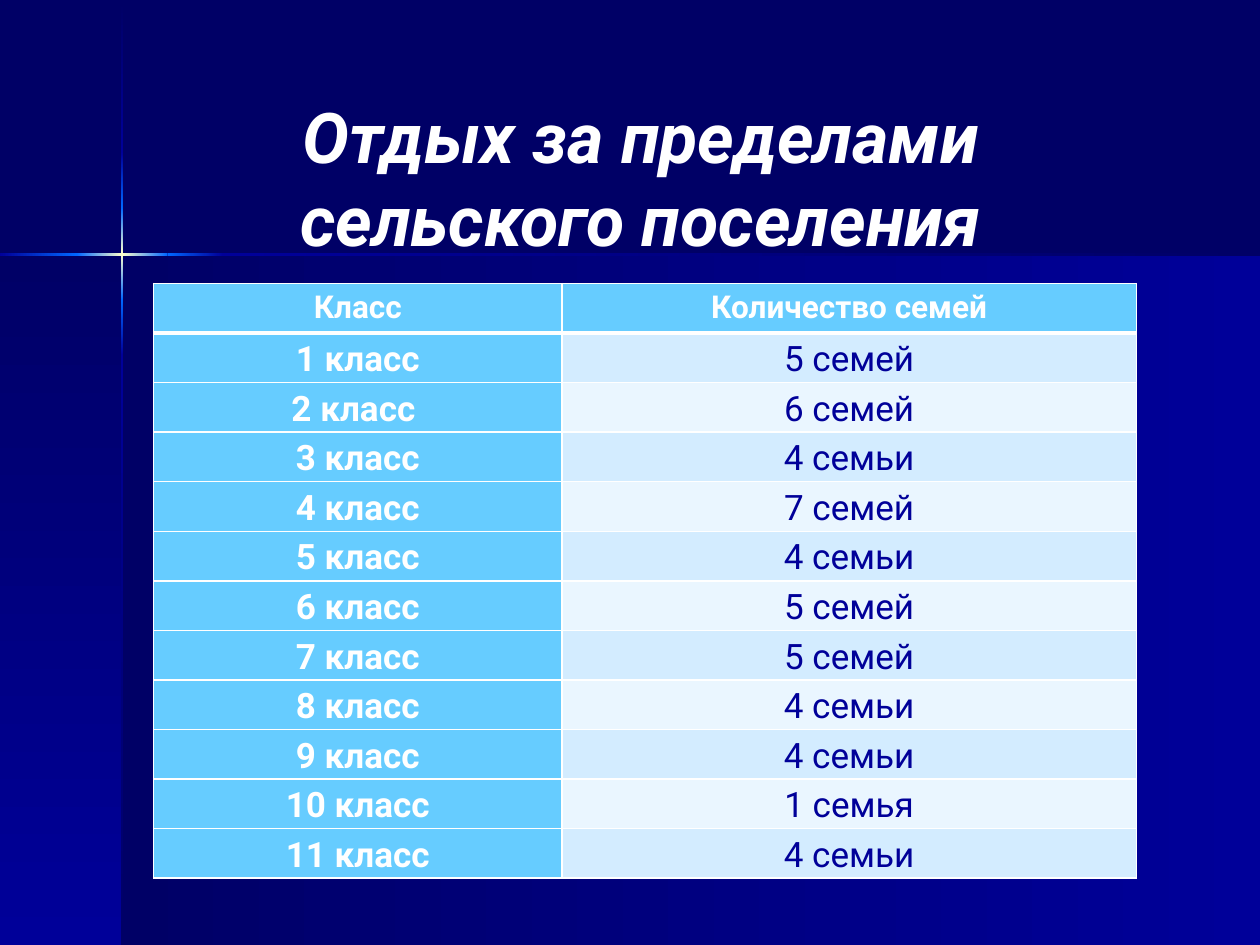
from itertools import pairwise

from lxml import etree
from pptx import Presentation
from pptx.dml.color import RGBColor
from pptx.enum.shapes import MSO_SHAPE
from pptx.enum.text import MSO_ANCHOR, MSO_AUTO_SIZE, PP_ALIGN
from pptx.oxml.ns import qn
from pptx.util import Inches, Pt

RECT = MSO_SHAPE.RECTANGLE
MIDDLE = MSO_ANCHOR.MIDDLE
CENTER = PP_ALIGN.CENTER
GROW = MSO_AUTO_SIZE.SHAPE_TO_FIT_TEXT

COLORS = {
    "night": "000066",
    "navy": "000099",
    "blue": "0066FF",
    "spark": "FFFFCC",
    "white": "FFFFFF",
    "sky": "66CCFF",
    "band_dark": "D3ECFF",
    "band_light": "EAF6FF",
}
FONT = "Roboto"
TITLE = ["Отдых за пределами", "сельского поселения"]
HEADER = ("Класс", "Количество семей")
ROWS = [
    ("1 класс", "5 семей"),
    ("2 класс ", "6 семей"),
    ("3 класс", "4 семьи"),
    ("4 класс", "7 семей"),
    ("5 класс", "4 семьи"),
    ("6 класс", "5 семей"),
    ("7 класс", "5 семей"),
    ("8 класс", "4 семьи"),
    ("9 класс", "4 семьи"),
    ("10 класс", "1 семья"),
    ("11 класс", "4 семьи"),
]


def rgb(name):
    return RGBColor.from_string(COLORS[name])


def format_text(p, text, size, color, bold, italic=False):
    p.alignment = CENTER
    r = p.add_run()
    r.text = text
    values = {"name": FONT, "size": Pt(size), "bold": bold, "italic": italic}
    for attr, value in values.items():
        setattr(r.font, attr, value)
    r.font.color.rgb = rgb(color)


def add_gradient(s, box, names, down=False):
    """Rectangle with evenly spaced gradient stops, running right or down."""
    sp = s.shapes.add_shape(RECT, *map(Inches, box))
    sp.shadow.inherit = False
    sp.line.fill.background()
    sp.fill.gradient()
    sp.fill.gradient_angle = 270 if down else 0
    stops = sp._element.spPr.find(qn("a:gradFill")).find(qn("a:gsLst"))
    for old in list(stops):
        stops.remove(old)
    for i, name in enumerate(names):
        pos = str(100000 * i // (len(names) - 1))
        gs = etree.SubElement(stops, qn("a:gs"), pos=pos)
        etree.SubElement(gs, qn("a:srgbClr"), val=COLORS[name])


def add_backdrop(s, box):
    """Two panels below a horizon, with a glowing cross where they meet."""
    left, top, width, height = box
    right, bottom = left + width, top + height
    cross_x, cross_y, thick = left + 0.97, top + 2.02, 0.02

    # Panels
    add_gradient(s, (cross_x, cross_y, right - cross_x, bottom - cross_y),
                 ("night", "navy"))
    add_gradient(s, (left, cross_y, cross_x - left, bottom - cross_y),
                 ("night", "navy"), down=True)

    # Beams
    glow = [("navy", "blue"), ("blue", "spark", "blue"), ("blue", "navy")]
    fade_in, fade_out = ("night", "navy"), ("navy", "night")
    ys = [top + y for y in (0.01, 1.21, 1.65, 2.38, 2.82)] + [bottom]
    for (y1, y2), names in zip(pairwise(ys), [fade_in, *glow, fade_out]):
        add_gradient(s, (cross_x - thick / 2, y1, thick, y2 - y1), names, down=True)
    xs = [left + x for x in (0, 0.61, 1.33, 1.77)] + [right]
    for (x1, x2), names in zip(pairwise(xs), [*glow, fade_out]):
        add_gradient(s, (x1, cross_y - thick / 2, x2 - x1, thick), names)


def set_borders(cell, widths):
    tc_pr = cell._tc.get_or_add_tcPr()
    for side, width in widths.items():
        ln = etree.SubElement(tc_pr, qn(f"a:ln{side}"), w=str(Pt(width)))
        fill = etree.SubElement(ln, qn("a:solidFill"))
        etree.SubElement(fill, qn("a:srgbClr"), val=COLORS["white"])


def add_family_table(s, box):
    rows = [HEADER, *ROWS]
    left, top, width, height = map(Inches, box)
    table = s.shapes.add_table(len(rows), 2, left, top, width, height).table
    table.columns[0].width = Inches(3.24)
    table.columns[1].width = width - Inches(3.24)
    margins = {"margin_left": 0.07, "margin_right": 0.07,
               "margin_top": 0, "margin_bottom": 0}
    for i, row in enumerate(rows):
        table.rows[i].height = height // len(rows)
        for j, text in enumerate(row):
            cell = table.cell(i, j)
            for attr, value in margins.items():
                setattr(cell, attr, Inches(value))
            set_borders(cell, {"L": 1, "R": 1, "T": 3 if i == 1 else 1,
                               "B": 3 if i == 0 else 1})
            heading = i == 0 or j == 0
            band = "band_dark" if i % 2 else "band_light"
            cell.fill.solid()
            cell.fill.fore_color.rgb = rgb("sky" if heading else band)
            p = cell.text_frame.paragraphs[0]
            p.line_spacing = 1.15
            format_text(p, text, 20 if i else 18,
                        "white" if heading else "navy", heading)


def add_title(s, box):
    sp = s.shapes.title
    sp.left, sp.top, sp.width, sp.height = map(Inches, box)
    tf = sp.text_frame
    for attr, value in {"word_wrap": True, "auto_size": GROW,
                        "vertical_anchor": MIDDLE}.items():
        setattr(tf, attr, value)
    for i, line in enumerate(TITLE):
        p = tf.add_paragraph() if i else tf.paragraphs[0]
        format_text(p, line, 40, "white", True, italic=True)
    # Bring the title in front of the backdrop
    sp._element.getparent().append(sp._element)


def main():
    prs = Presentation()
    prs.slide_width, prs.slide_height = Inches(10), Inches(7.5)
    s = prs.slides.add_slide(prs.slide_layouts[5])
    s.background.fill.solid()
    s.background.fill.fore_color.rgb = rgb("night")
    add_backdrop(s, (0, 0, 10, 7.5))
    add_family_table(s, (1.22, 2.25, 7.8, 4.72))
    add_title(s, (0.91, 0.68, 8.35, 1.45))
    prs.save("out.pptx")


if __name__ == "__main__":
    main()
